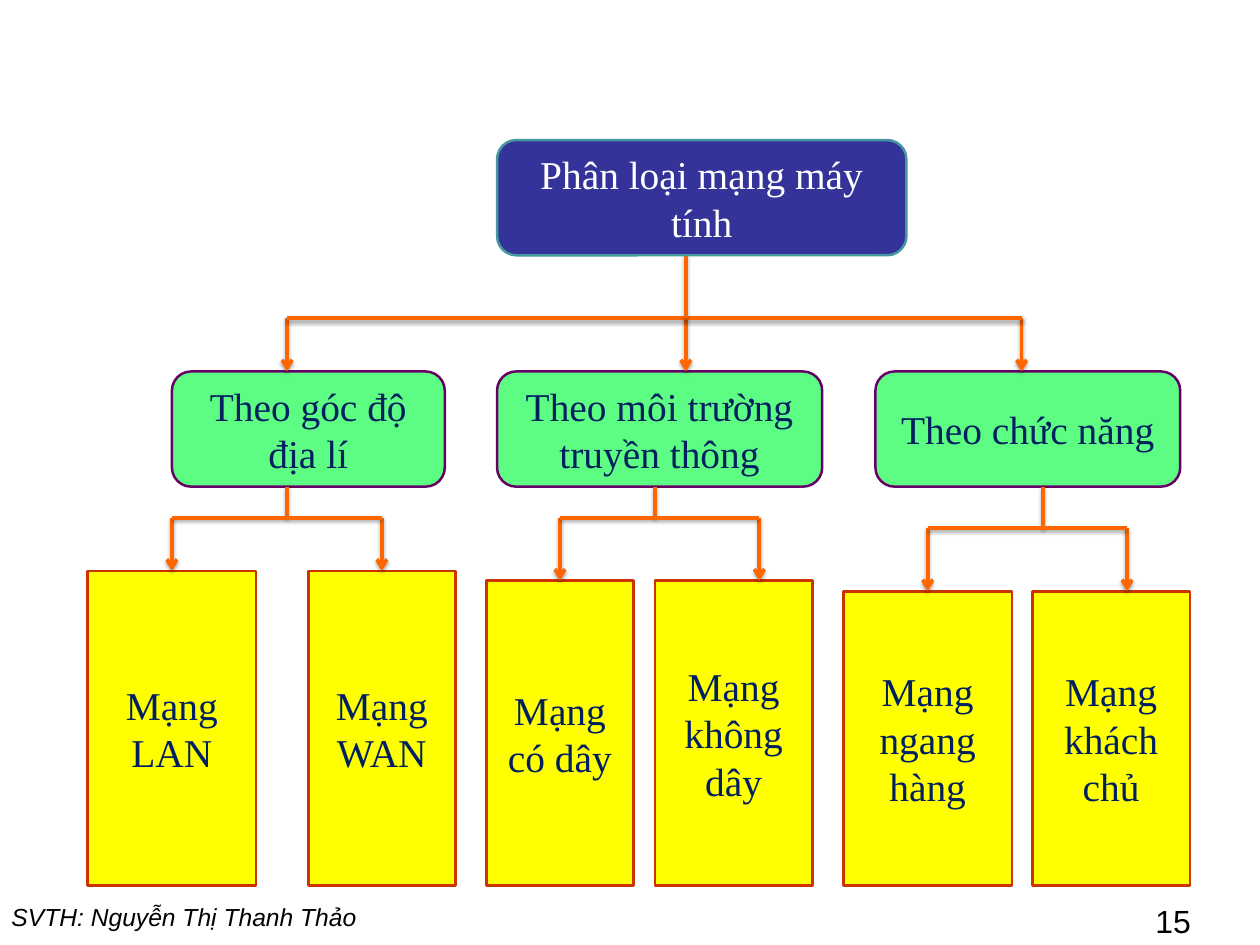
from lxml import etree
from pptx import Presentation
from pptx.dml.color import RGBColor
from pptx.enum.shapes import MSO_CONNECTOR, MSO_SHAPE
from pptx.enum.text import MSO_ANCHOR, PP_ALIGN
from pptx.oxml.ns import qn
from pptx.util import Pt

PX = 9144  # 100 px to the inch
ROUNDED, RECTANGLE = MSO_SHAPE.ROUNDED_RECTANGLE, MSO_SHAPE.RECTANGLE
STRAIGHT = MSO_CONNECTOR.STRAIGHT
CENTER, MIDDLE = PP_ALIGN.CENTER, MSO_ANCHOR.MIDDLE

WHITE = RGBColor(0xFF, 0xFF, 0xFF)
BLACK = RGBColor(0x00, 0x00, 0x00)
NAVY = RGBColor(0x00, 0x20, 0x60)
INDIGO = RGBColor(0x33, 0x33, 0x99)
TEAL = RGBColor(0x45, 0x97, 0xA0)
GREEN = RGBColor(0x5D, 0xFD, 0x83)
PURPLE = RGBColor(0x66, 0x00, 0x66)
YELLOW = RGBColor(0xFF, 0xFF, 0x00)
RED = RGBColor(0xCC, 0x33, 0x00)
ORANGE = RGBColor(0xFF, 0x66, 0x00)

ROOT_BOTTOM, ROOT_BAR = 288, 359
BRANCH_TOP, BRANCH_HEIGHT = 419, 130
BRANCH_BOTTOM = BRANCH_TOP + BRANCH_HEIGHT
LEAF_BOTTOM = 999

deck = Presentation()
deck.slide_width, deck.slide_height = 1422 * PX, 1066 * PX
page = deck.slides.add_slide(deck.slide_layouts[6])
page.background.fill.solid()
page.background.fill.fore_color.rgb = WHITE


def add_box(kind, text, left, top, width, height, fill, border, color):
    box = page.shapes.add_shape(kind, left * PX, top * PX, width * PX, height * PX)
    box.shadow.inherit = False
    box.fill.solid()
    box.fill.fore_color.rgb = fill
    box.line.color.rgb = border
    box.line.width = Pt(2)
    frame = box.text_frame
    frame.word_wrap = True
    frame.vertical_anchor = MIDDLE
    frame.margin_left = frame.margin_right = 14 * PX
    frame.margin_top = frame.margin_bottom = 7 * PX
    para = frame.paragraphs[0]
    para.alignment = CENTER
    span = para.add_run()
    span.text = text
    span.font.name, span.font.size = "Times New Roman", Pt(32)
    span.font.color.rgb = color


def add_line(x1, y1, x2, y2, arrow=False):
    line = page.shapes.add_connector(STRAIGHT, x1 * PX, y1 * PX, x2 * PX, y2 * PX)
    line.line.color.rgb = ORANGE
    line.line.width = Pt(3)
    if arrow:
        etree.SubElement(line.line._get_or_add_ln(), qn("a:tailEnd"), type="arrow")
    effects = etree.SubElement(line._element.spPr, qn("a:effectLst"))
    shadow = etree.SubElement(effects, qn("a:outerShdw"), blurRad="39370",
                              dist="22860", dir="5400000", rotWithShape="0")
    tint = etree.SubElement(shadow, qn("a:srgbClr"), val="000000")
    etree.SubElement(tint, qn("a:alpha"), val="35000")


# Footer: author and page number
for text, left, width, height, size, italic in [
    ("SVTH: Nguyễn Thị Thanh Thảo", 3, 692, 44, 20, True),
    ("15", 1294, 92, 54, 26, False),
]:
    box = page.shapes.add_textbox(left * PX, 1012 * PX, width * PX, height * PX)
    box.text_frame.word_wrap = True
    span = box.text_frame.paragraphs[0].add_run()
    span.text = text
    span.font.name, span.font.size = "Arial", Pt(size)
    span.font.italic = italic
    span.font.color.rgb = BLACK

# Branches: text, left, width, arrow x, stem x, bar y, leaf top, leaves
# Leaves: text, left, width, arrow x
branches = [
    ("Theo góc độ địa lí", 194, 308, 324, 324, 584, 644,
     [("Mạng LAN", 99, 190, 194), ("Mạng WAN", 348, 166, 431)]),
    ("Theo môi trường truyền thông", 561, 367, 774, 739, 584, 655,
     [("Mạng có dây", 549, 166, 632), ("Mạng không dây", 739, 178, 857)]),
    ("Theo chức năng", 988, 344, 1153, 1177, 596, 667,
     [("Mạng ngang hàng", 952, 190, 1047), ("Mạng khách chủ", 1165, 178, 1272)]),
]
for text, left, width, arrow_x, stem_x, bar_y, leaf_top, leaves in branches:
    add_box(ROUNDED, text, left, BRANCH_TOP, width, BRANCH_HEIGHT, GREEN, PURPLE, NAVY)
    add_line(arrow_x, ROOT_BAR, arrow_x, BRANCH_TOP, arrow=True)
    for leaf_text, leaf_left, leaf_width, leaf_x in leaves:
        add_box(RECTANGLE, leaf_text, leaf_left, leaf_top, leaf_width,
                LEAF_BOTTOM - leaf_top, YELLOW, RED, NAVY)
        add_line(leaf_x, bar_y, leaf_x, leaf_top, arrow=True)
    add_line(stem_x, BRANCH_BOTTOM, stem_x, bar_y)
    add_line(leaves[0][3], bar_y, leaves[-1][3], bar_y)

# Root with its stem and bar
add_line(branches[0][3], ROOT_BAR, branches[-1][3], ROOT_BAR)
add_line(branches[1][3], ROOT_BOTTOM, branches[1][3], ROOT_BAR)
add_box(ROUNDED, "Phân loại mạng máy tính", 561, 158, 462, 130, INDIGO, TEAL, WHITE)

deck.save("out.pptx")
